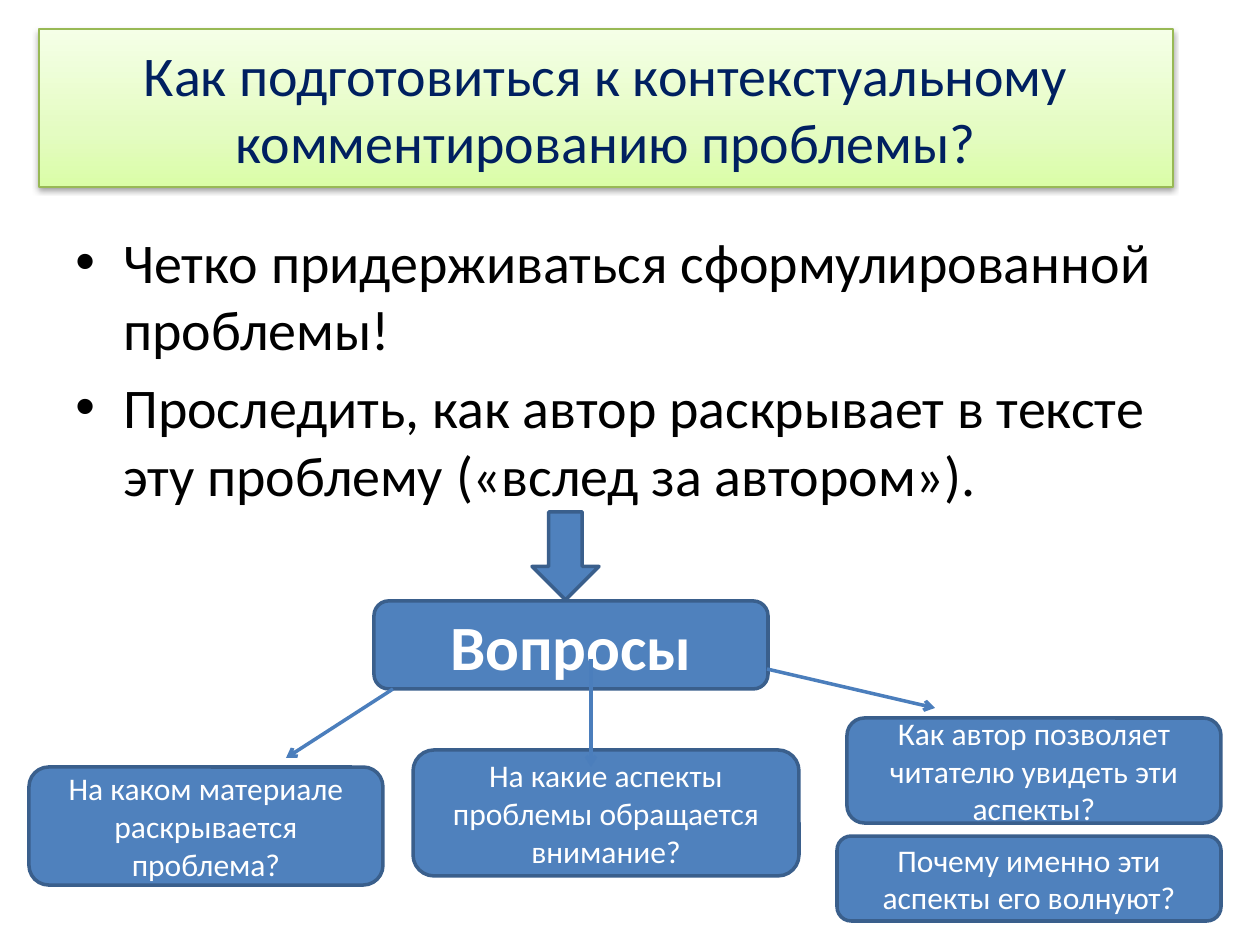
from lxml import etree
from pptx import Presentation
from pptx import util as u
from pptx.dml.color import RGBColor
from pptx.enum import shapes, text
from pptx.oxml import parse_xml
from pptx.oxml.ns import nsdecls, qn

NAVY = RGBColor(0x00, 0x20, 0x60)
BLACK = RGBColor(0x00, 0x00, 0x00)
WHITE = RGBColor(0xFF, 0xFF, 0xFF)
BLUE = RGBColor(0x4F, 0x81, 0xBD)
EDGE = RGBColor(0x3A, 0x5F, 0x8C)
WIRE = RGBColor(0x4B, 0x7E, 0xBC)
GREEN = RGBColor(0x98, 0xB9, 0x55)
FADE = [(0, RGBColor(0xDA, 0xFD, 0xA7)), (35, RGBColor(0xE4, 0xFC, 0xC2)),
        (100, RGBColor(0xF5, 0xFF, 0xE7))]

FRAME = {"word_wrap": True, "auto_size": text.MSO_AUTO_SIZE.NONE}
MIDDLE = {**FRAME, "vertical_anchor": text.MSO_ANCHOR.MIDDLE}
HEAD = {"name": "Calibri", "size": u.Pt(32)}
NOTE = {"name": "Calibri", "size": u.Pt(18)}
KEY = {"name": "Calibri", "size": u.Pt(36), "bold": True}

ROUND = shapes.MSO_SHAPE.ROUNDED_RECTANGLE
CARD = shapes.MSO_SHAPE.FLOWCHART_ALTERNATE_PROCESS
ARROW = shapes.MSO_SHAPE.DOWN_ARROW

TITLE = "Как подготовиться к контекстуальному комментированию проблемы?"
POINTS = [
    "Четко придерживаться сформулированной проблемы!",
    "Проследить, как автор раскрывает в тексте эту проблему («вслед за автором»).",
]
CARDS = [
    ((29, 767, 354, 118), "На каком материале раскрывается проблема?"),
    ((413, 750, 386, 126), "На какие аспекты проблемы обращается внимание?"),
    ((837, 836, 384, 85), "Почему именно эти аспекты его волнуют?"),
    ((847, 718, 374, 105), "Как автор позволяет читателю увидеть эти аспекты?"),
]
WIRES = [(393, 689, 286, 758), (591, 659, 591, 767), (767, 669, 935, 708)]


def px(*nums):
    return [u.Emu(round(n * 914400 / 126)) for n in nums]


def put(obj, vals):
    for key, val in vals.items():
        setattr(obj, key, val)


def style(para, font, color, align):
    para.alignment = align
    put(para.font, font)
    para.font.color.rgb = color


def edge(shape, color, width):
    shape.line.color.rgb = color
    shape.line.width = u.Pt(width)


def add_title(slide):
    title = slide.shapes.title
    put(title, dict(zip(("left", "top", "width", "height"),
                        px(39, 29, 1134, 158))))
    put(title.text_frame, MIDDLE)
    title.text_frame.text = TITLE
    style(title.text_frame.paragraphs[0], HEAD, NAVY, text.PP_ALIGN.CENTER)
    edge(title, GREEN, 0.75)

    # Upward fade and soft shadow
    stops = "".join(f'<a:gs pos="{pos * 1000}"><a:srgbClr val="{color}"/></a:gs>'
                    for pos, color in FADE)
    line = title.line._get_or_add_ln()
    line.addprevious(parse_xml(
        f'<a:gradFill {nsdecls("a")} rotWithShape="1"><a:gsLst>{stops}</a:gsLst>'
        '<a:lin ang="16200000" scaled="1"/></a:gradFill>'))
    line.addnext(parse_xml(
        f'<a:effectLst {nsdecls("a")}><a:outerShdw blurRad="{u.Pt(3.1)}" '
        f'dist="{u.Pt(1.6)}" dir="5400000" rotWithShape="0">'
        '<a:srgbClr val="000000"><a:alpha val="38000"/></a:srgbClr>'
        '</a:outerShdw></a:effectLst>'))


def add_list(slide, box, points):
    frame = slide.shapes.add_textbox(*px(*box)).text_frame
    put(frame, FRAME)
    for i, point in enumerate(points):
        para = frame.add_paragraph() if i else frame.paragraphs[0]
        para.text = point
        props = para._p.get_or_add_pPr()
        props.set("marL", str(u.Inches(0.38)))
        props.set("indent", str(-u.Inches(0.38)))
        etree.SubElement(props, qn("a:buFont")).set("typeface", "Arial")
        etree.SubElement(props, qn("a:buChar")).set("char", "•")
        style(para, HEAD, BLACK, text.PP_ALIGN.LEFT)
        if i:
            para.space_before = u.Pt(6.4)


def add_box(slide, kind, box, words="", font=NOTE):
    shape = slide.shapes.add_shape(kind, *px(*box))
    shape.shadow.inherit = False
    shape.fill.solid()
    shape.fill.fore_color.rgb = BLUE
    edge(shape, EDGE, 2)
    if words:
        put(shape.text_frame, MIDDLE)
        shape.text_frame.text = words
        style(shape.text_frame.paragraphs[0], font, WHITE, text.PP_ALIGN.CENTER)


def add_wire(slide, ends):
    wire = slide.shapes.add_connector(shapes.MSO_CONNECTOR.STRAIGHT, *px(*ends))
    edge(wire, WIRE, 2)
    line = wire.line._get_or_add_ln()
    etree.SubElement(line, qn("a:tailEnd")).set("type", "arrow")
    etree.SubElement(wire._element.spPr, qn("a:effectLst"))


def main():
    deck = Presentation()
    deck.slide_width, deck.slide_height = px(1260, 945)
    slide = deck.slides.add_slide(deck.slide_layouts[5])

    # Heading and advice
    add_title(slide)
    add_list(slide, (63, 221, 1134, 624), POINTS)

    # Question tree
    add_box(slide, ARROW, (532, 512, 67, 88))
    add_box(slide, ROUND, (374, 601, 394, 88), "Вопросы", KEY)
    for box, words in CARDS:
        add_box(slide, CARD, box, words)
    for ends in WIRES:
        add_wire(slide, ends)

    deck.save("out.pptx")


if __name__ == "__main__":
    main()
